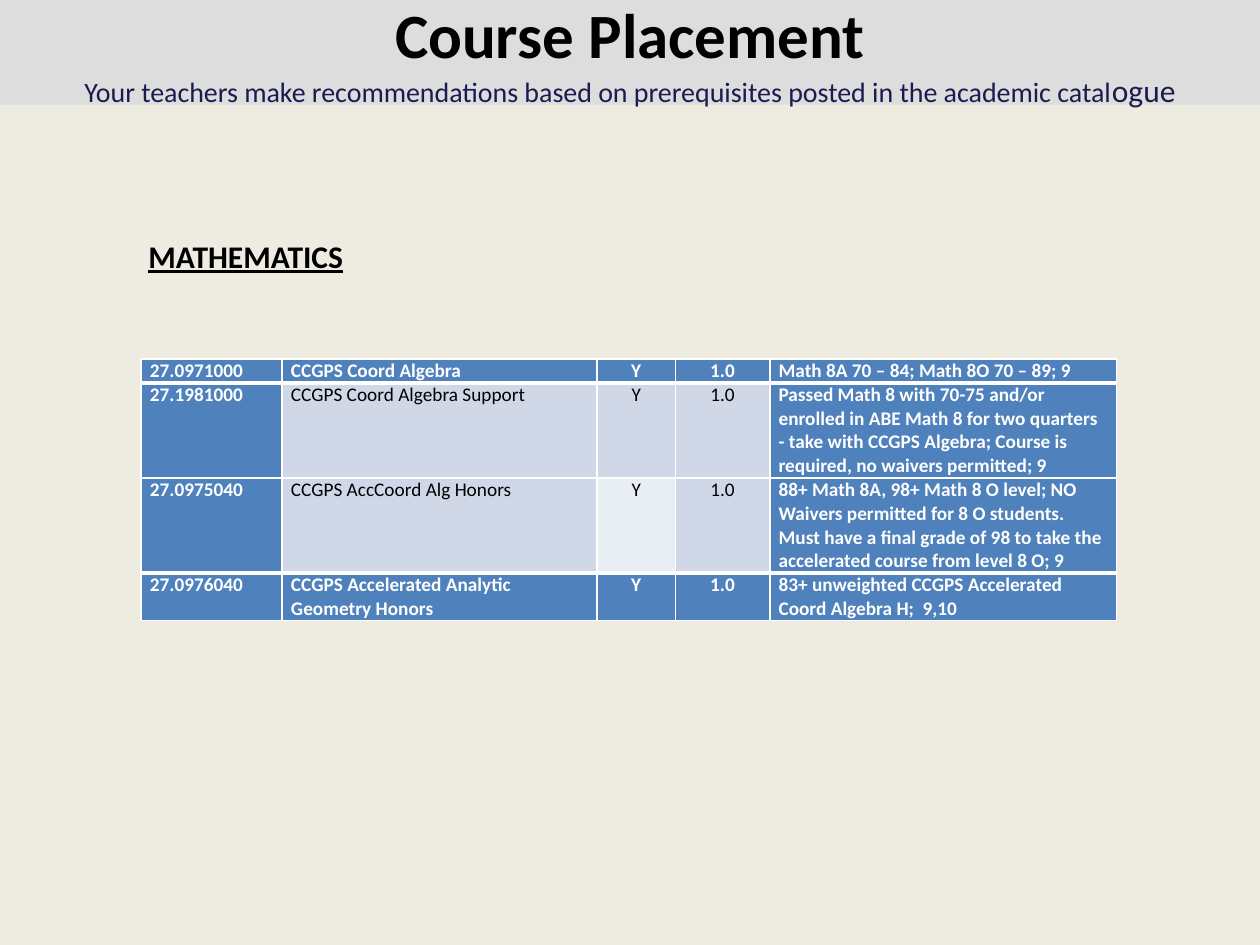
import pptx
import pptx.util
import pptx.dml.color
import pptx.enum.text
import pptx.oxml
import pptx.oxml.ns

Inches, Pt = pptx.util.Inches, pptx.util.Pt
ALIGN = pptx.enum.text.PP_ALIGN
ANCHOR = pptx.enum.text.MSO_ANCHOR
AUTO_SIZE = pptx.enum.text.MSO_AUTO_SIZE

# Content
TITLE = "Course Placement"
SUBTITLE = ("Your teachers make recommendations based on prerequisites "
            "posted in the academic catal", "ogue")
SUBJECT = "MATHEMATICS"
COURSES = [
    ("27.0971000", "CCGPS Coord Algebra", "Y", "1.0",
     "Math 8A 70 – 84; Math 8O 70 – 89; 9"),
    ("27.1981000", "CCGPS Coord Algebra Support", "Y", "1.0",
     "Passed Math 8 with 70-75 and/or enrolled in ABE Math 8 for two quarters "
     "- take with CCGPS Algebra; Course is required, no waivers permitted; 9"),
    ("27.0975040", "CCGPS AccCoord Alg Honors", "Y", "1.0",
     "88+ Math 8A, 98+ Math 8 O level; NO Waivers permitted for 8 O students.  "
     "Must have a final grade of 98 to take the accelerated course from level 8 O; 9"),
    ("27.0976040", "CCGPS Accelerated Analytic Geometry Honors", "Y", "1.0",
     "83+ unweighted CCGPS Accelerated Coord Algebra H;  9,10"),
]

# Look and layout
THEME = {
    "font": "Calibri",
    "page": "EEECE1", "band": "DDDDDD", "text": "000000", "subtitle": "1B1B51",
    "strong": "4F81BD", "soft": "D0D8E8", "pale": "E9EDF4", "line": "FFFFFF",
    "title_size": 36, "subtitle_size": 16, "ending_size": 18,
    "subject_size": 18, "table_size": 11,
}
COLUMNS = (1.12, 2.5, 0.62, 0.75, 2.75)
LINES_PER_ROW = (1, 4, 4, 2)
LINE_HEIGHT = 0.18
CENTRED = (2, 3)
PALE_CELL = (2, 2)
THIN, THICK = 1, 3


def color(name):
    return pptx.dml.color.RGBColor.from_string(THEME[name])


def style(span, size, color_name, bold=False):
    font = span.font
    font.name = THEME["font"]
    font.size = Pt(THEME[size])
    font.bold = bold
    font.color.rgb = color(color_name)


def place(shape, left, top, width, height):
    shape.left, shape.top = Inches(left), Inches(top)
    shape.width, shape.height = Inches(width), Inches(height)


def add_border(cell, sides):
    """Put the lines ahead of the cell's fill, in schema order."""
    properties = cell._tc.get_or_add_tcPr()
    for index, (side, points) in enumerate(sides):
        properties.insert(index, pptx.oxml.parse_xml(
            f'<a:{side} {pptx.oxml.ns.nsdecls("a")} w="{int(Pt(points))}">'
            f'<a:solidFill><a:srgbClr val="{THEME["line"]}"/></a:solidFill>'
            f'</a:{side}>'))


def add_title_band(page):
    band = page.shapes.title
    place(band, 0, 0, 10, 0.83)
    band.fill.solid()
    band.fill.fore_color.rgb = color("band")
    frame = band.text_frame
    frame.text = TITLE
    frame.word_wrap = False
    frame.auto_size = AUTO_SIZE.NONE
    frame.vertical_anchor = ANCHOR.MIDDLE
    style(frame.paragraphs[0].runs[0], "title_size", "text", bold=True)
    para = frame.add_paragraph()
    for text, size in zip(SUBTITLE, ("subtitle_size", "ending_size")):
        span = para.add_run()
        span.text = text
        style(span, size, "subtitle")
    for para in frame.paragraphs:
        para.alignment = ALIGN.CENTER


def add_course_table(page):
    last = len(COURSES) - 1
    frame = page.shapes.add_table(
        len(COURSES), len(COLUMNS), Inches(1.12), Inches(2.85),
        Inches(sum(COLUMNS)), Inches(sum(LINES_PER_ROW) * LINE_HEIGHT))
    table = frame.table
    for column, width in zip(table.columns, COLUMNS):
        column.width = Inches(width)
    for row, lines in zip(table.rows, LINES_PER_ROW):
        row.height = Inches(lines * LINE_HEIGHT)

    for r, course in enumerate(COURSES):
        top = THICK if r in (1, last) else THIN
        bottom = THICK if r in (0, last - 1) else THIN
        for c, text in enumerate(course):
            strong = r in (0, last) or c in (0, len(COLUMNS) - 1)
            fill = "strong" if strong else "pale" if (r, c) == PALE_CELL else "soft"
            cell = table.cell(r, c)
            cell.margin_left = cell.margin_right = Inches(0.07)
            cell.margin_top = cell.margin_bottom = 0
            cell.fill.solid()
            cell.fill.fore_color.rgb = color(fill)
            cell.text_frame.text = text
            para = cell.text_frame.paragraphs[0]
            para.alignment = ALIGN.CENTER if c in CENTRED else ALIGN.LEFT
            style(para.runs[0], "table_size", "line" if strong else "text", strong)
            add_border(cell, (("lnL", THIN), ("lnR", THIN),
                              ("lnT", top), ("lnB", bottom)))


def add_subject(page):
    box = page.shapes.add_textbox(Inches(1.08), Inches(1.83), Inches(1.76), Inches(0.4))
    frame = box.text_frame
    frame.text = SUBJECT
    frame.word_wrap = False
    frame.auto_size = AUTO_SIZE.SHAPE_TO_FIT_TEXT
    span = frame.paragraphs[0].runs[0]
    style(span, "subject_size", "text", bold=True)
    span.font.underline = True


def main():
    deck = pptx.Presentation()
    deck.slide_width, deck.slide_height = Inches(10), Inches(7.5)
    page = deck.slides.add_slide(deck.slide_layouts.get_by_name("Title Only"))
    page.background.fill.solid()
    page.background.fill.fore_color.rgb = color("page")
    add_title_band(page)
    add_course_table(page)
    add_subject(page)
    deck.save("out.pptx")


if __name__ == "__main__":
    main()
